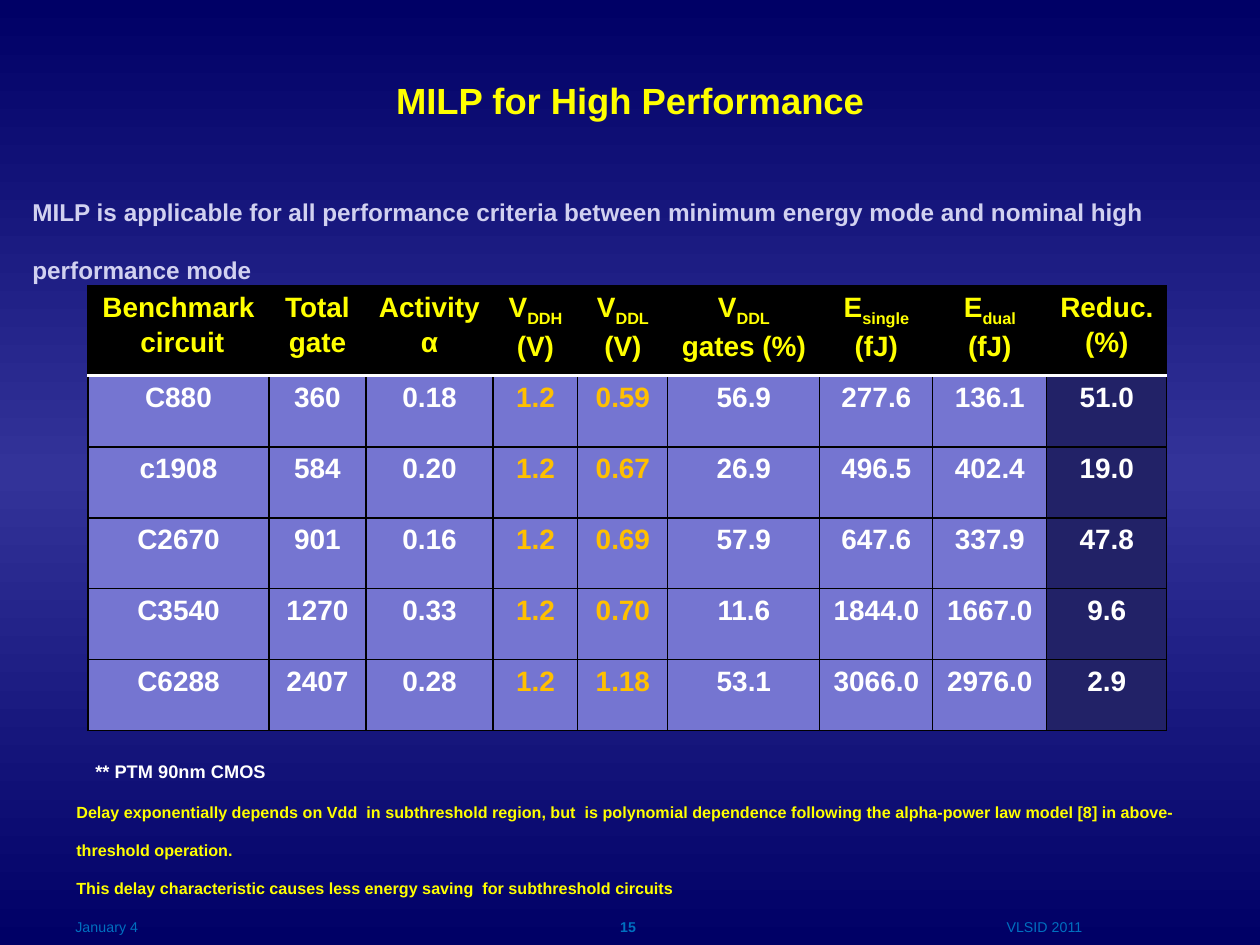
from copy import deepcopy

from lxml import etree
from pptx import Presentation
from pptx.dml.color import RGBColor
from pptx.enum.text import MSO_ANCHOR, PP_ALIGN
from pptx.oxml.ns import qn
from pptx.util import Emu, Pt

LEFT, CENTER = PP_ALIGN.LEFT, PP_ALIGN.CENTER
TOP, MIDDLE = MSO_ANCHOR.TOP, MSO_ANCHOR.MIDDLE

EMU_PER_PX = 914400 / 126
FONT = "Arial"
LINE_PITCH = 2.38

NAVY = RGBColor(0x00, 0x00, 0x66)
INDIGO = RGBColor(0x33, 0x33, 0x99)
YELLOW = RGBColor(0xFF, 0xFF, 0x00)
LAVENDER = RGBColor(0xD1, 0xD1, 0xF0)
WHITE = RGBColor(0xFF, 0xFF, 0xFF)
BLACK = RGBColor(0x00, 0x00, 0x00)
AMBER = RGBColor(0xFF, 0xC0, 0x00)
PERIWINKLE = RGBColor(0x75, 0x75, 0xD1)
MIDNIGHT = RGBColor(0x22, 0x22, 0x67)
BLUE = RGBColor(0x00, 0x70, 0xC0)

COLUMN_WIDTHS = [181, 97, 127, 85, 90, 152, 113, 114, 120]
HEADER_HEIGHT, ROW_HEIGHT = 90, 71
VOLTAGE_COLUMNS = (3, 4)
REDUCTION_COLUMN = 8
HEADINGS = [
    ("Benchmark", "", " circuit"),
    ("Total", "", "gate"),
    ("Activity", "", "α"),
    ("V", "DDH", "(V)"),
    ("V", "DDL", "(V)"),
    ("V", "DDL", "gates (%)"),
    ("E", "single", "(fJ)"),
    ("E", "dual", "(fJ)"),
    ("Reduc.", "", "(%)"),
]
BENCHMARKS = [
    ("C880", "360", "0.18", "1.2", "0.59", "56.9", "277.6", "136.1", "51.0"),
    ("c1908", "584", "0.20", "1.2", "0.67", "26.9", "496.5", "402.4", "19.0"),
    ("C2670", "901", "0.16", "1.2", "0.69", "57.9", "647.6", "337.9", "47.8"),
    ("C3540", "1270", "0.33", "1.2", "0.70", "11.6", "1844.0", "1667.0", "9.6"),
    ("C6288", "2407", "0.28", "1.2", "1.18", "53.1", "3066.0", "2976.0", "2.9"),
]


def px(length):
    return Emu(round(length * EMU_PER_PX))


def style_font(font, size, color, bold=True):
    font.name = FONT
    font.size = Pt(size)
    font.bold = bold
    font.color.rgb = color


def paint_background(slide):
    fill = slide.background.fill
    fill.gradient()
    fill.gradient_angle = 90
    stop_list = slide.element.find(".//" + qn("a:gsLst"))
    stop_list.append(deepcopy(stop_list[-1]))
    stops = zip(fill.gradient_stops, (0, 0.5, 1), (NAVY, INDIGO, NAVY))
    for stop, position, color in stops:
        stop.position = position
        stop.color.rgb = color


def add_text(slide, box, text, size, color, bold=True, align=LEFT, anchor=TOP):
    frame = slide.shapes.add_textbox(*map(px, box)).text_frame
    frame.word_wrap = True
    frame.vertical_anchor = anchor
    frame.text = text
    for paragraph in frame.paragraphs:
        paragraph.alignment = align
        paragraph.line_spacing = Pt(round(size * LINE_PITCH, 1))
        for run in paragraph.runs:
            style_font(run.font, size, color, bold)


def add_heading(slide, box):
    left, top, width, height = box
    add_text(slide, (left + 43, top, width - 101, 157), "MILP for High Performance",
             20.8, YELLOW, align=CENTER, anchor=MIDDLE)
    add_text(slide, (left, top + 162, width, height - 162),
             "MILP is applicable for all performance criteria between minimum "
             "energy mode and nominal high performance mode", 13.9, LAVENDER)


def set_border(cell, side, color, width):
    line = etree.SubElement(cell._tc.get_or_add_tcPr(), qn("a:" + side),
                            w=str(Pt(width)))
    solid = etree.SubElement(line, qn("a:solidFill"))
    etree.SubElement(solid, qn("a:srgbClr"), val=str(color))


def fill_cell(cell, text, text_color, fill_color, rule_sides):
    for side in ("lnL", "lnR", "lnT", "lnB"):
        if side in rule_sides:
            set_border(cell, side, WHITE, 2)
        else:
            set_border(cell, side, BLACK, 0.75)
    cell.fill.solid()
    cell.fill.fore_color.rgb = fill_color
    cell.text_frame.text = text
    for paragraph in cell.text_frame.paragraphs:
        paragraph.alignment = CENTER
        paragraph.space_before = Pt(2.2)
        for run in paragraph.runs:
            style_font(run.font, 16, text_color)


def add_subscript(paragraph, text):
    run = paragraph.add_run()
    run.text = text
    style_font(run.font, 16, YELLOW)
    run.font._element.set("baseline", "-25000")


def add_benchmark_table(slide, box):
    frame = slide.shapes.add_table(len(BENCHMARKS) + 1, len(HEADINGS), *map(px, box))
    table = frame.table
    for column, width in zip(table.columns, COLUMN_WIDTHS):
        column.width = px(width)
    for index, row in enumerate(table.rows):
        row.height = px(ROW_HEIGHT if index else HEADER_HEIGHT)

    for column, (name, subscript, unit) in enumerate(HEADINGS):
        cell = table.cell(0, column)
        fill_cell(cell, f"{name}\n{unit}", YELLOW, BLACK, ("lnB",))
        if subscript:
            add_subscript(cell.text_frame.paragraphs[0], subscript)

    for row, values in enumerate(BENCHMARKS, start=1):
        for column, value in enumerate(values):
            text_color = AMBER if column in VOLTAGE_COLUMNS else WHITE
            fill_color = MIDNIGHT if column == REDUCTION_COLUMN else PERIWINKLE
            rule_sides = ("lnT",) if row == 1 else ()
            fill_cell(table.cell(row, column), value, text_color, fill_color, rule_sides)


def add_notes_below_table(slide, box):
    left, top, width, height = box
    add_text(slide, (left + 19, top, 444, 50), "** PTM 90nm CMOS", 10.4, WHITE)
    add_text(slide, (left, top + 44, width, height - 44),
             "Delay exponentially depends on Vdd  in subthreshold region, but  is "
             "polynomial dependence following the alpha-power law model [8] in "
             "above-threshold operation.\n"
             "This delay characteristic causes less energy saving  for "
             "subthreshold circuits", 9.2, YELLOW)


def add_footer(slide, box):
    left, top, width, height = box
    add_text(slide, (left, top, 294, height), "January 4", 8.1, BLUE, bold=False)
    add_text(slide, (left + 418, top, 294, height), "15", 8.1, BLUE, align=CENTER)
    add_text(slide, (left + width - 399, top, 399, height), "VLSID 2011", 8.1, BLUE,
             bold=False, align=CENTER)


def main():
    presentation = Presentation()
    presentation.slide_width, presentation.slide_height = px(1260), px(945)
    slide = presentation.slides.add_slide(presentation.slide_layouts[6])
    paint_background(slide)
    add_heading(slide, (20, 0, 1235, 277))
    add_benchmark_table(slide, (88, 286, sum(COLUMN_WIDTHS), 445))
    add_footer(slide, (63, 895, 1181, 66))
    add_notes_below_table(slide, (64, 733, 1133, 159))
    presentation.save("out.pptx")


if __name__ == "__main__":
    main()
